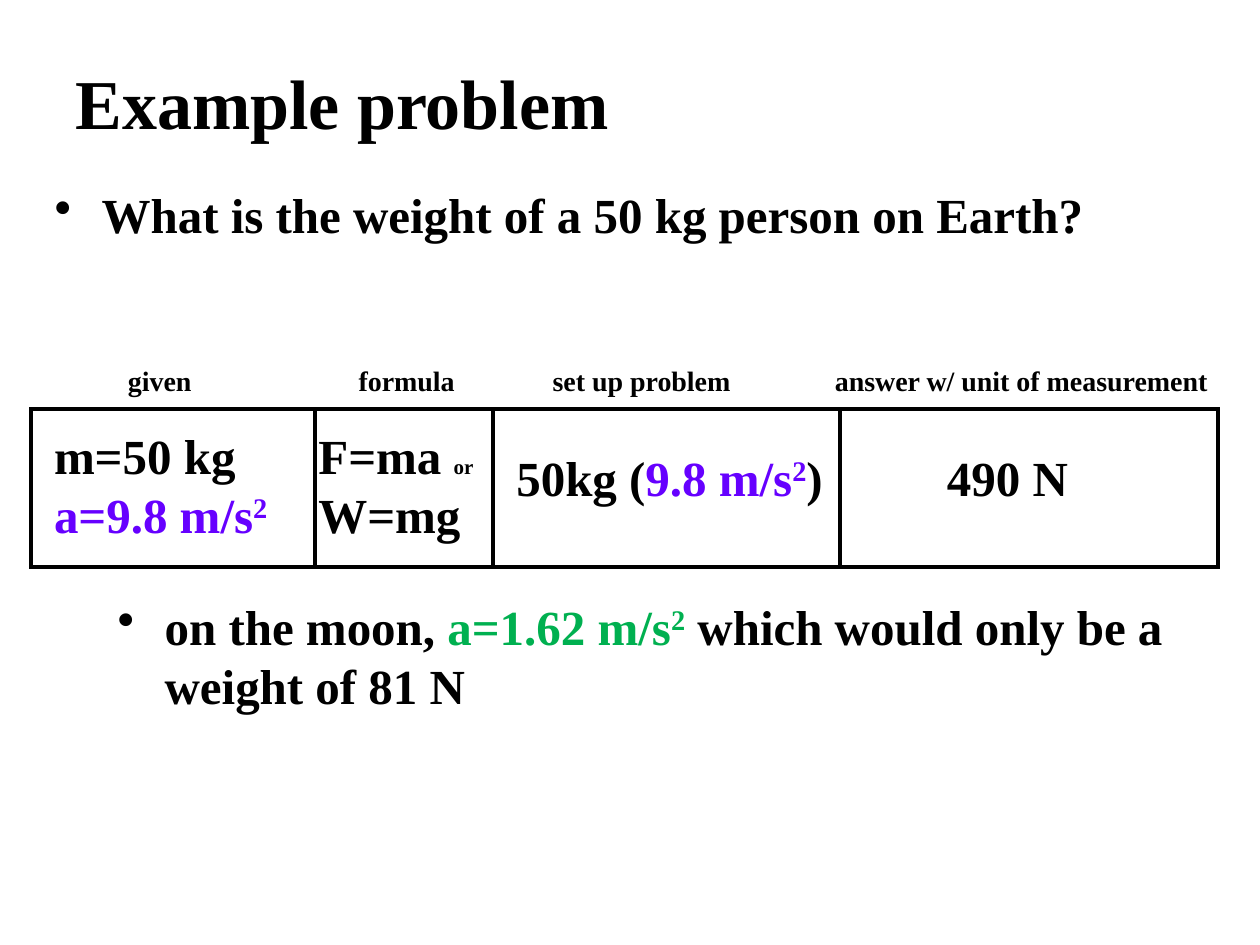
from collections import namedtuple
from dataclasses import dataclass

from lxml.etree import SubElement
from pptx import Presentation
from pptx.dml.color import RGBColor
from pptx.enum.shapes import MSO_CONNECTOR, MSO_SHAPE
from pptx.enum.text import MSO_ANCHOR, PP_ALIGN
from pptx.oxml.ns import qn
from pptx.util import Cm, Pt


@dataclass(frozen=True)
class Theme:
    font: str = "Times New Roman"
    black: str = "000000"
    violet: str = "6600FF"
    green: str = "00B050"
    title: int = 40
    body: int = 28
    label: int = 16
    small: int = 12
    line: float = 2.25


THEME = Theme()
Box = namedtuple("Box", "left top width height")
Piece = namedtuple("Piece", "text color size raised",
                   defaults=(THEME.black, THEME.body, False))
Column = namedtuple("Column", "label label_left label_width lines left top")

COLUMNS = [
    Column("given", 1.7, 3,
           [[Piece("m=50 kg")],
            [Piece("a=9.8 m/s", THEME.violet), Piece("2", THEME.violet, raised=True)]],
           0.21, 0.21),
    Column("formula", 6.35, 3,
           [[Piece("F=ma "), Piece("or", size=THEME.small)], [Piece("W=mg")]],
           5.54, 0.21),
    Column("set up problem", 10.26, 5,
           [[Piece("50kg ("), Piece("9.8 m/s", THEME.violet),
             Piece("2", THEME.violet, raised=True), Piece(")")]],
           9.53, 0.64),
    Column("answer w/ unit of measurement", 15.95, 8.5, [[Piece("490 N")]], 18.21, 0.64),
]
DIVIDERS = [5.72, 9.31, 16.31]


def set_attributes(target, **values):
    for name, value in values.items():
        setattr(target, name, value)


def write_pieces(paragraph, pieces):
    paragraph.alignment = PP_ALIGN.LEFT
    for piece in pieces:
        run = paragraph.add_run()
        run.text = piece.text
        set_attributes(run.font, name=THEME.font, size=Pt(piece.size), bold=True)
        run.font.color.rgb = RGBColor.from_string(piece.color)
        if piece.raised:
            run.font._element.set("baseline", "30000")


def add_text(slide, box, lines, wrap=False, line_gap=0):
    """Add a text box with one paragraph per line and return its paragraphs."""
    frame = slide.shapes.add_textbox(*map(Cm, box)).text_frame
    frame.word_wrap = wrap
    for number, pieces in enumerate(lines):
        paragraph = frame.add_paragraph() if number else frame.paragraphs[0]
        paragraph.space_before = Pt(line_gap if number else 0)
        write_pieces(paragraph, pieces)
    return frame.paragraphs


def add_bullet(paragraph, level, indent, hanging):
    paragraph.level = level
    properties = paragraph._p.get_or_add_pPr()
    properties.set("marL", str(Cm(indent)))
    properties.set("indent", str(-Cm(hanging)))
    SubElement(properties, qn("a:buChar"), char="•")


def fill_title(slide, box):
    title = slide.shapes.title
    set_attributes(title, **{name: Cm(value) for name, value in box._asdict().items()})
    set_attributes(title.text_frame, vertical_anchor=MSO_ANCHOR.MIDDLE, word_wrap=True)
    write_pieces(title.text_frame.paragraphs[0],
                 [Piece("Example problem", size=THEME.title)])


def add_statements(slide, box):
    """Place the question above the solution grid and the moon case below it."""
    question, moon = add_text(slide, box, [
        [Piece("What is the weight of a 50 kg person on Earth?")],
        [Piece("on the moon, "), Piece("a=1.62 m/s", THEME.green),
         Piece("2", THEME.green, raised=True),
         Piece(" which would only be a weight of 81 N")],
    ], wrap=True, line_gap=201.5)
    add_bullet(question, 0, 0.95, 0.95)
    add_bullet(moon, 1, 2.22, 0.95)


def add_divider(slide, x, top, bottom):
    divider = slide.shapes.add_connector(
        MSO_CONNECTOR.STRAIGHT, Cm(x), Cm(top), Cm(x), Cm(bottom))
    SubElement(divider._element.spPr, qn("a:effectLst"))
    return divider


def add_solution_grid(slide, box):
    frame = slide.shapes.add_shape(MSO_SHAPE.RECTANGLE, *map(Cm, box))
    frame.shadow.inherit = False
    frame.fill.background()
    dividers = [add_divider(slide, box.left + x, box.top, box.top + box.height)
                for x in DIVIDERS]
    for shape in [frame, *dividers]:
        shape.line.color.rgb = RGBColor.from_string(THEME.black)
        shape.line.width = Pt(THEME.line)
    SubElement(frame.line._get_or_add_ln(), qn("a:miter"), lim="800000")

    for column, end in zip(COLUMNS, [*DIVIDERS, box.width]):
        label_box = Box(box.left + column.label_left, box.top - 1.04,
                        column.label_width, 0.94)
        add_text(slide, label_box, [[Piece(column.label, size=THEME.label)]])
        cell_box = Box(box.left + column.left, box.top + column.top,
                       end - column.left, 1.45 * len(column.lines))
        add_text(slide, cell_box, column.lines)


def main():
    presentation = Presentation()
    set_attributes(presentation, slide_width=Cm(25.4), slide_height=Cm(19.05))
    slide = presentation.slides.add_slide(
        presentation.slide_layouts.get_by_name("Title Only"))
    fill_title(slide, Box(1.27, 1.06, 22.86, 1.98))
    add_statements(slide, Box(0.85, 3.6, 23.28, 12.27))
    add_solution_grid(slide, Box(0.63, 8.25, 23.92, 3.18))
    presentation.save("out.pptx")


if __name__ == "__main__":
    main()
